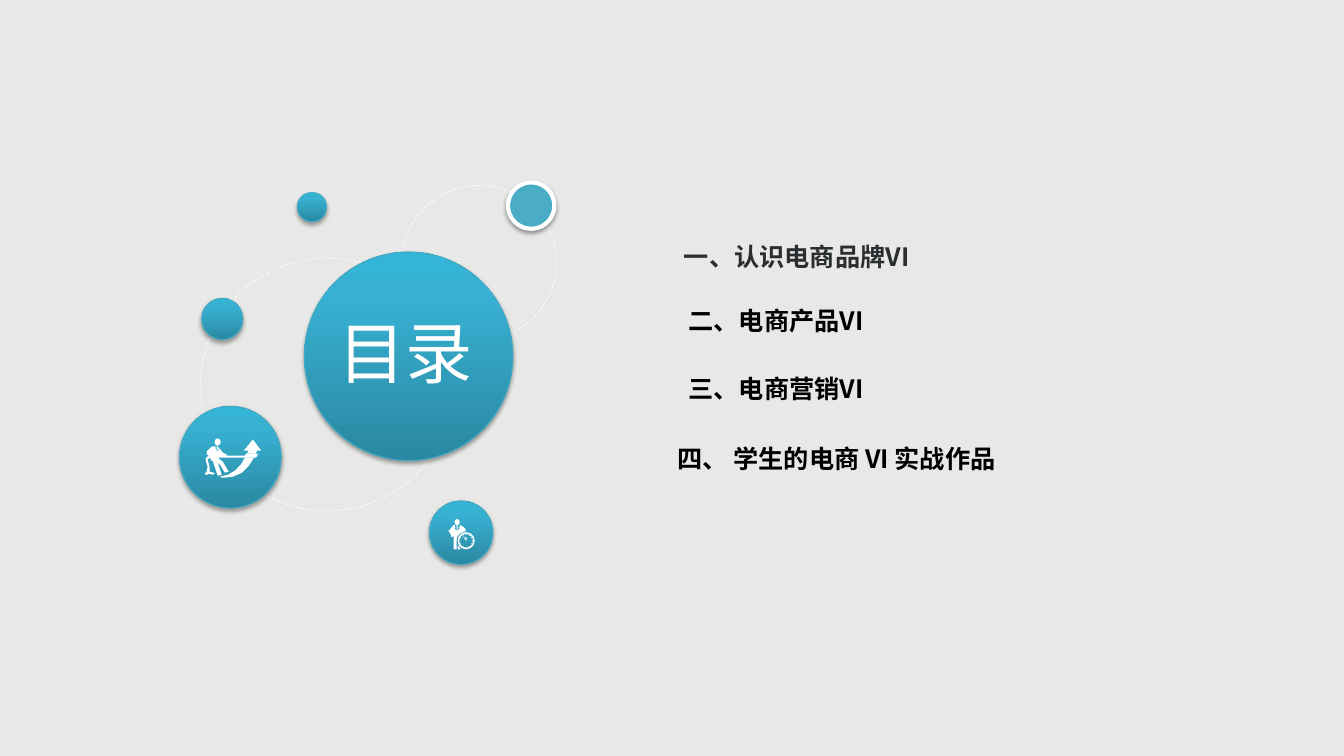
from dataclasses import dataclass
from math import cos, radians, sin

from lxml.etree import SubElement
from pptx import Presentation
from pptx.dml.color import RGBColor
from pptx.enum.dml import MSO_LINE
from pptx.enum.shapes import MSO_SHAPE
from pptx.enum.text import MSO_ANCHOR, MSO_AUTO_SIZE, PP_ALIGN
from pptx.oxml.ns import qn
from pptx.shapes.autoshape import Shape
from pptx.slide import Slide
from pptx.text.text import _Paragraph
from pptx.util import Pt

FONT = "Noto Sans CJK SC"
WHITE = "FFFFFF"
BLUE_STOPS = ((0, "2A88A2"), (80, "37B1D2"), (100, "34B4D6"))
ICON_UNIT = 0.72  # points per step of the icon grids


@dataclass(frozen=True)
class Disc:
    left: float
    top: float
    size: float


@dataclass(frozen=True)
class Entry:
    text: str
    indent: float
    space_before: float
    color: str = "000000"


@dataclass(frozen=True)
class Icon:
    """Corner in points; head box and outlines in grid steps from it."""
    left: float
    top: float
    head: tuple[float, float, float, float]
    outlines: tuple[tuple[tuple[int, int], ...], ...]


ORBITS = (Disc(287.3, 132.5, 110.2), Disc(143.3, 184.3, 180.7))
BLUE_DISCS = (
    Disc(217.4, 180, 149),
    Disc(306.7, 357.8, 45.4),
    Disc(144, 213.1, 29.5),
    Disc(212.4, 137.5, 20.9),
    Disc(128.2, 290.2, 72.7),
)
RINGED_DISC = Disc(362.9, 130.3, 33.1)

ENTRIES = (
    Entry("一、认识电商品牌VI", 4.7, 0, "2B2E30"),
    Entry("二、电商产品VI", 8, 24.3),
    Entry("三、电商营销VI", 8, 27.3),
    Entry("四、 学生的电商 VI 实战作品", 0, 27.9),
)

TIMEKEEPER = Icon(320.4, 370.8, (6, 0, 5, 6), (
    ((17, 12), (17, 10), (15, 8), (12, 6), (11, 6), (12, 7), (10, 8), (11, 9),
     (9, 12), (9, 6), (8, 6), (8, 12), (6, 9), (7, 8), (6, 7), (7, 6), (5, 6),
     (4, 7), (1, 11), (0, 11), (0, 13), (1, 13), (2, 15), (3, 18), (5, 17),
     (5, 30), (8, 30), (8, 21), (9, 17), (12, 14)),
    ((9, 26), (9, 30), (12, 30), (11, 28)),
    ((18, 21), (18, 18), (17, 18), (17, 20), (15, 17), (15, 18), (17, 21)),
))
ROPE_PULLER = Icon(146.16, 313.2, (10, 0, 6, 7), (
    ((40, 19), (36, 26), (30, 32), (23, 36), (15, 38), (18, 39), (28, 38),
     (37, 34), (44, 27), (49, 19)),
    ((42, 15), (51, 15), (52, 12), (56, 12), (48, 1), (39, 12), (44, 12)),
    ((52, 15), (41, 15), (40, 17), (22, 17), (22, 16), (18, 14), (14, 9),
     (13, 9), (14, 11), (13, 14), (13, 7), (12, 7), (12, 14), (11, 10),
     (11, 8), (8, 8), (6, 9), (2, 13), (2, 16), (3, 16), (4, 17), (1, 20),
     (2, 25), (3, 28), (2, 33), (0, 35), (1, 36), (3, 36), (4, 35), (8, 36),
     (10, 35), (9, 34), (5, 33), (5, 28), (3, 21), (6, 19), (6, 22), (8, 22),
     (13, 37), (17, 36), (13, 24), (16, 27), (20, 34), (24, 33), (18, 23),
     (14, 20), (14, 19), (51, 19), (53, 16)),
))


def rgb(code: str) -> RGBColor:
    return RGBColor.from_string(code)


def set_attributes(target: object, values: dict) -> None:
    for name, value in values.items():
        setattr(target, name, value)


def fill_solid(shape: Shape, color: str) -> None:
    shape.fill.solid()
    shape.fill.fore_color.rgb = rgb(color)


def fill_blue_gradient(shape: Shape) -> None:
    shape.fill.gradient()
    shape.fill.gradient_angle = 90
    stops = next(shape.element.iter(qn("a:gsLst")))
    stops.clear()
    for percent, color in BLUE_STOPS:
        stop = SubElement(stops, qn("a:gs"), pos=str(percent * 1000))
        SubElement(stop, qn("a:srgbClr"), val=color)


def cast_shadow(shape: Shape, distance: float, opacity: int) -> None:
    effects = next(shape.element.iter(qn("a:effectLst")))
    shadow = SubElement(effects, qn("a:outerShdw"), blurRad=str(Pt(3.1)),
                        dist=str(Pt(distance)), dir="5400000", rotWithShape="0")
    color = SubElement(shadow, qn("a:srgbClr"), val="000000")
    SubElement(color, qn("a:alpha"), val=str(opacity * 1000))


def add_disc(slide: Slide, disc: Disc, line_color: str, line_width: float) -> Shape:
    shape = slide.shapes.add_shape(MSO_SHAPE.OVAL, Pt(disc.left), Pt(disc.top),
                                   Pt(disc.size), Pt(disc.size))
    shape.shadow.inherit = False
    shape.line.color.rgb = rgb(line_color)
    shape.line.width = Pt(line_width)
    return shape


def make_white(shape: Shape) -> None:
    fill_solid(shape, WHITE)
    shape.line.fill.background()
    shape.shadow.inherit = False


def add_icon_part(slide: Slide, icon: Icon, kind: MSO_SHAPE, left: float,
                  top: float, width: float, height: float) -> Shape:
    """Add a white preset shape placed on the icon's grid."""
    part = slide.shapes.add_shape(
        kind, Pt(icon.left + left * ICON_UNIT), Pt(icon.top + top * ICON_UNIT),
        Pt(width * ICON_UNIT), Pt(height * ICON_UNIT))
    make_white(part)
    return part


def add_icon(slide: Slide, icon: Icon) -> None:
    add_icon_part(slide, icon, MSO_SHAPE.OVAL, *icon.head)
    for start, *rest in icon.outlines:
        builder = slide.shapes.build_freeform(*start, scale=float(Pt(ICON_UNIT)))
        builder.add_line_segments(rest, close=True)
        make_white(builder.convert_to_shape(Pt(icon.left), Pt(icon.top)))


def add_clock_face(slide: Slide, icon: Icon) -> None:
    rim = add_icon_part(slide, icon, MSO_SHAPE.DONUT, 9, 13, 17, 17)
    rim.adjustments[0] = 0.09
    for hour in range(12):
        angle = radians(30 * hour)
        add_icon_part(slide, icon, MSO_SHAPE.OVAL, 17 + 6.2 * cos(angle),
                      21 + 6.2 * sin(angle), 1, 1)


def format_frame(shape: Shape, left: float, top: float, width: float,
                 height: float) -> None:
    set_attributes(shape, {"left": Pt(left), "top": Pt(top),
                           "width": Pt(width), "height": Pt(height)})
    set_attributes(shape.text_frame, {
        "margin_left": 0, "margin_top": 0, "margin_right": 0, "margin_bottom": 0,
        "word_wrap": True, "auto_size": MSO_AUTO_SIZE.NONE,
        "vertical_anchor": MSO_ANCHOR.TOP})


def write(paragraph: _Paragraph, text: str, size: float, color: str, bold: bool,
          **layout: object) -> None:
    set_attributes(paragraph, {"line_spacing": 1.0, "space_after": Pt(0), **layout})
    run = paragraph.add_run()
    run.text = text
    set_attributes(run.font, {"size": Pt(size), "bold": bold, "name": FONT})
    run.font.color.rgb = rgb(color)
    SubElement(run._r.get_or_add_rPr(), qn("a:ea"), typeface=FONT)


def write_contents(body: Shape) -> None:
    format_frame(body, 483.8, 172, 270, 190)
    for number, entry in enumerate(ENTRIES):
        frame = body.text_frame
        paragraph = frame.add_paragraph() if number else frame.paragraphs[0]
        write(paragraph, entry.text, 18, entry.color, True,
              alignment=PP_ALIGN.LEFT, space_before=Pt(entry.space_before))
        properties = paragraph._p.get_or_add_pPr()
        properties.set("marL", str(Pt(entry.indent)))
        properties.set("indent", "0")
        SubElement(properties, qn("a:buNone"))


def main() -> None:
    deck = Presentation()
    set_attributes(deck, {"slide_width": Pt(960), "slide_height": Pt(540)})
    slide = deck.slides.add_slide(deck.slide_layouts[1])
    fill_solid(slide.background, "E8E8E6")

    for orbit in ORBITS:
        circle = add_disc(slide, orbit, WHITE, 0.5)
        circle.fill.background()
        circle.line.dash_style = MSO_LINE.DASH
    for disc in BLUE_DISCS:
        bubble = add_disc(slide, disc, "46AAC5", 0.75)
        fill_blue_gradient(bubble)
        cast_shadow(bubble, 1.8, 35)
    ringed = add_disc(slide, RINGED_DISC, WHITE, 3)
    fill_solid(ringed, "4BACC6")
    cast_shadow(ringed, 1.6, 38)

    add_icon(slide, TIMEKEEPER)
    add_clock_face(slide, TIMEKEEPER)
    add_icon(slide, ROPE_PULLER)

    title, contents = slide.placeholders
    format_frame(title, 227.5, 222.5, 124, 70)
    write(title.text_frame.paragraphs[0], "目录", 48, WHITE, False,
          alignment=PP_ALIGN.CENTER, space_before=Pt(0))
    write_contents(contents)
    for placeholder in (title, contents):
        slide.shapes.element.append(placeholder.element)
    deck.save("out.pptx")


if __name__ == "__main__":
    main()
